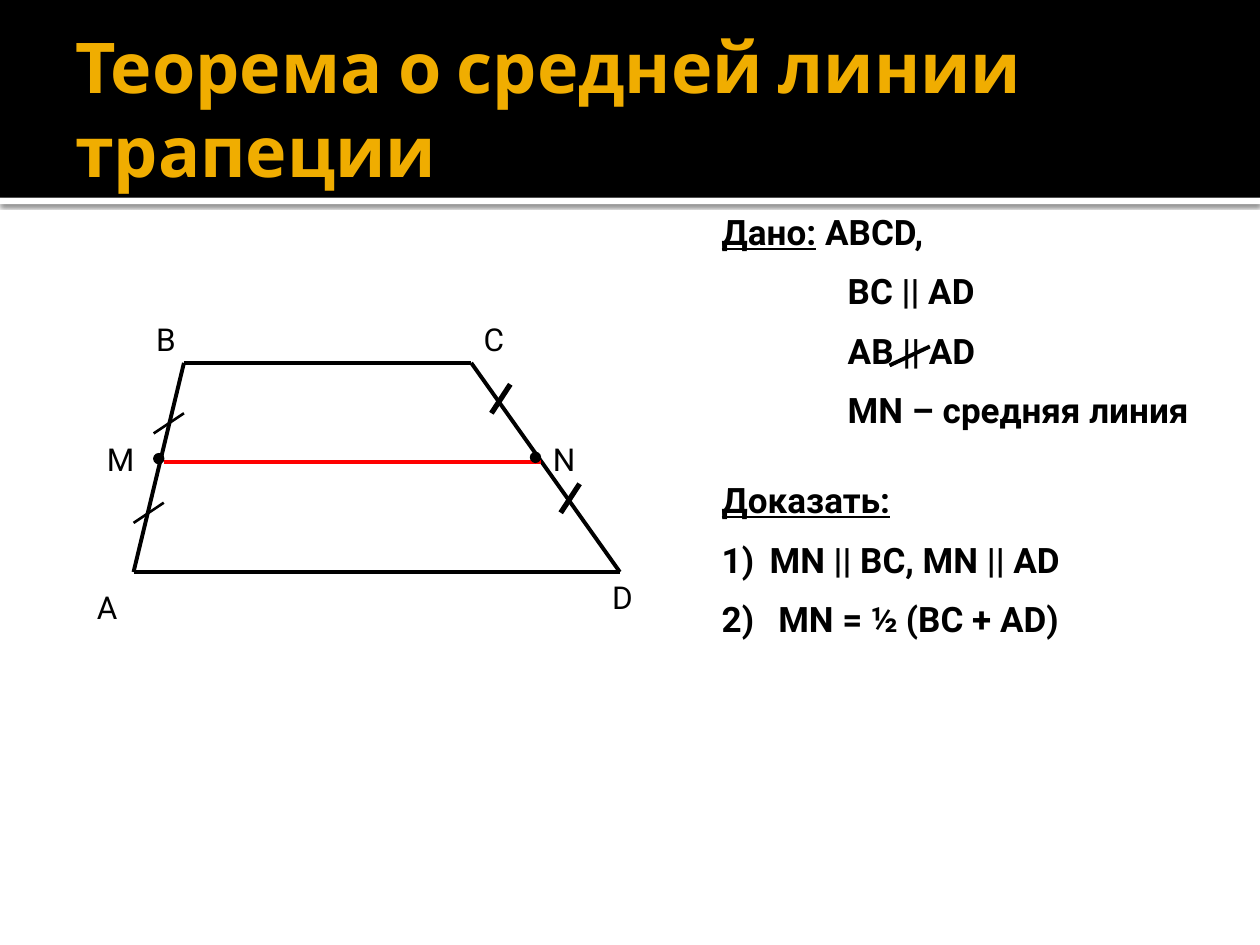
from lxml.etree import SubElement
from pptx import Presentation
from pptx.dml.color import RGBColor
from pptx.enum.shapes import MSO_CONNECTOR, MSO_SHAPE
from pptx.enum.text import MSO_ANCHOR
from pptx.oxml.ns import qn
from pptx.util import Inches, Pt

BLACK = RGBColor(0, 0, 0)
WHITE = RGBColor(255, 255, 255)
GOLD = RGBColor(0xF0, 0xAD, 0x00)
RED = RGBColor(255, 0, 0)

# Corners of the trapezoid
A, B, C, D = (1.06, 4.54), (1.46, 2.88), (3.74, 2.88), (4.92, 4.54)


def add_shape(slide, kind, box, fill, edge=None):
    shape = slide.shapes.add_shape(kind, *map(Inches, box))
    shape.shadow.inherit = False
    shape.fill.solid()
    shape.fill.fore_color.rgb = fill
    if edge:
        shape.line.color.rgb = edge
        shape.line.width = Pt(0.75)
    else:
        shape.line.fill.background()
    return shape


def add_shade(shape):
    """Soft shadow just below a bar."""
    effects = shape._element.spPr.find(qn("a:effectLst"))
    shade = SubElement(effects, qn("a:outerShdw"), blurRad=str(Pt(2.5)),
                       dist=str(Pt(0.8)), dir="5400000", algn="tl", rotWithShape="0")
    color = SubElement(shade, qn("a:srgbClr"), val="000000")
    SubElement(color, qn("a:alpha"), val="60000")


def add_line(slide, start, end, width=2.25, color=BLACK):
    line = slide.shapes.add_connector(
        MSO_CONNECTOR.STRAIGHT, *map(Inches, (*start, *end)))
    line.line.color.rgb = color
    line.line.width = Pt(width)
    SubElement(line._element.spPr, qn("a:effectLst"))


def add_box(slide, box):
    frame = slide.shapes.add_textbox(*map(Inches, box)).text_frame
    frame.word_wrap = True
    return frame


def add_run(para, text, size, bold=False, under=False, name="Roboto", color=BLACK):
    run = para.add_run()
    run.text = text
    font = run.font
    font.name, font.size, font.bold = name, Pt(size), bold
    font.underline = under
    font.color.rgb = color


def add_label(slide, text, left, top, width=0.55):
    frame = add_box(slide, (left, top, width, 0.4))
    add_run(frame.paragraphs[0], text, 18)


def add_paras(slide, box, rows):
    """Bold paragraphs; each row is a list of (text, size, underlined) runs."""
    frame = add_box(slide, box)
    for i, row in enumerate(rows):
        para = frame.add_paragraph() if i else frame.paragraphs[0]
        if i:
            para.space_before = Pt(10)
        for text, size, under in row:
            add_run(para, text, size, True, under)
    return frame.paragraphs


def add_tab(para):
    """Tab stop one inch in."""
    stops = SubElement(para._p.get_or_add_pPr(), qn("a:tabLst"))
    SubElement(stops, qn("a:tab"), pos=str(Inches(1)), algn="l")


def add_number(para):
    props = para._p.get_or_add_pPr()
    props.set("marL", str(Inches(0.38)))
    props.set("indent", str(Inches(-0.38)))
    SubElement(props, qn("a:buFont"), typeface="+mj-lt")
    SubElement(props, qn("a:buAutoNum"), type="arabicParenR")


def add_head(slide):
    add_shade(add_shape(slide, MSO_SHAPE.RECTANGLE, (0, 1.57, 10, 0.05), WHITE))
    add_shape(slide, MSO_SHAPE.RECTANGLE, (0, 0, 10, 1.57), BLACK)
    frame = add_box(slide, (0.5, 0.17, 9, 1.37))
    frame.vertical_anchor = MSO_ANCHOR.MIDDLE
    frame.margin_right = Inches(0.05)
    add_run(frame.paragraphs[0], "Теорема о средней линии трапеции", 40,
            True, name="Cabin", color=GOLD)


def add_figure(slide):
    # Sides and midline
    for start, end in ((A, D), (C, D), (B, C), (B, A)):
        add_line(slide, start, end)
    add_line(slide, (1.3, 3.67), (4.29, 3.67), color=RED)

    # Ticks on equal halves
    for x, y in ((1.22, 3.28), (1.06, 3.99)):
        add_line(slide, (x + 0.24, y), (x, y + 0.16), 1.5)
    for x, y in ((3.9, 3.05), (4.45, 3.84)):
        add_line(slide, (x + 0.15, y), (x, y + 0.23), 3)

    # Midpoints
    for x, y in ((1.22, 3.6), (4.21, 3.59)):
        add_shape(slide, MSO_SHAPE.FLOWCHART_CONNECTOR, (x, y, 0.08, 0.08), BLACK, BLACK)

    # Point names
    for text, x, y in (("A", 0.67, 4.62), ("D", 4.76, 4.54),
                       ("B", 1.14, 2.49), ("C", 3.74, 2.49)):
        add_label(slide, text, x, y)
    for text, x in (("M", 0.75), ("N", 4.29)):
        add_label(slide, text, x, 3.44, 0.31)


def add_proof(slide):
    # Given
    given = add_paras(slide, (5.63, 1.62, 4.33, 2.43), [
        [("Дано:", 20, True), (" ABCD,", 20, False)],
        [("\tBC || AD", 20, False)],
        [("\tAB || AD", 20, False)],
        [("\tMN – средняя линия", 20, False)],
    ])
    for para in given[1:]:
        add_tab(para)
    # Stroke through the parallel sign: "not parallel"
    add_line(slide, (7.38, 2.75), (7.06, 2.9))

    # To prove
    goals = add_paras(slide, (5.63, 3.75, 3.7, 1.43), [
        [("Доказать:", 20, True)],
        [("MN || BC, MN || AD", 20, False)],
        [(" MN = ½", 20, False), (" ", 18, False), ("(BC + AD)", 20, False)],
    ])
    for para in goals[1:]:
        add_number(para)


def main():
    deck = Presentation()
    deck.slide_width, deck.slide_height = Inches(10), Inches(7.5)
    slide = deck.slides.add_slide(deck.slide_layouts[6])
    add_head(slide)
    add_figure(slide)
    add_proof(slide)
    deck.save("out.pptx")


if __name__ == "__main__":
    main()
